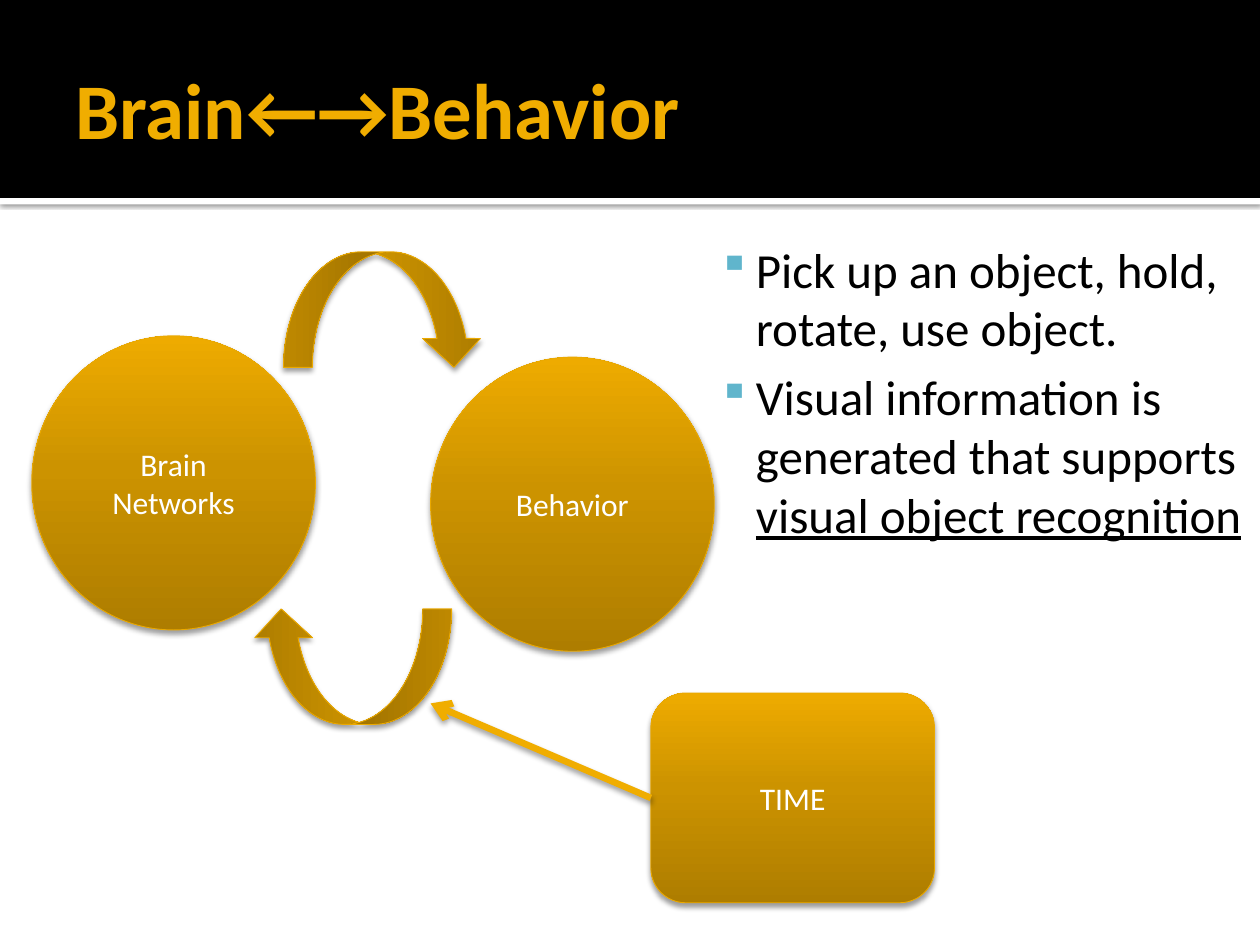
from copy import deepcopy

from lxml.etree import SubElement
from pptx import Presentation
from pptx.dml.color import RGBColor
from pptx.enum.shapes import MSO_CONNECTOR, MSO_SHAPE
from pptx.enum.text import MSO_ANCHOR, PP_ALIGN
from pptx.oxml.ns import qn
from pptx.util import Cm, Pt

BLACK = RGBColor(0x00, 0x00, 0x00)
WHITE = RGBColor(0xFF, 0xFF, 0xFF)
GOLD = RGBColor(0xF0, 0xAD, 0x00)
EDGE = RGBColor(0xEB, 0xA9, 0x00)
BLUE = RGBColor(0x60, 0xB5, 0xCC)
SHADES = [
    (0, RGBColor(0xAE, 0x7D, 0x00)),
    (0.55, RGBColor(0xCC, 0x93, 0x00)),
    (1, RGBColor(0xEE, 0xAB, 0x00)),
]


def add_tag(parent, tag, **attrs):
    node = SubElement(parent, qn(tag))
    for key, value in attrs.items():
        node.set(key, str(value))
    return node


def cast(item, blur, dist, alpha):
    """Give the item a black shadow that falls straight down."""
    props = item.element.spPr
    effects = props.find(qn("a:effectLst"))
    if effects is None:
        effects = add_tag(props, "a:effectLst")
    outer = add_tag(effects, "a:outerShdw", blurRad=Pt(blur), dist=Pt(dist),
                    dir=90 * 60000, algn="ctr", rotWithShape=0)
    color = add_tag(outer, "a:srgbClr", val=BLACK)
    add_tag(color, "a:alpha", val=alpha * 1000)


class Deck:
    font = "Calibri"

    def __init__(self, width, height):
        self.file = Presentation()
        self.file.slide_width = Cm(width)
        self.file.slide_height = Cm(height)
        self.slide = self.file.slides.add_slide(self.file.slide_layouts[5])

    def run(self, para, text, size, color, bold=False, under=False):
        run = para.add_run()
        run.text = text
        font = run.font
        font.name, font.size, font.bold = self.font, Pt(size), bold
        font.color.rgb = color
        if under:
            font.underline = True

    def frame(self, shape, insets, anchor):
        frame = shape.text_frame
        frame.word_wrap = True
        frame.vertical_anchor = anchor
        (frame.margin_left, frame.margin_top,
         frame.margin_right, frame.margin_bottom) = map(Cm, insets)
        return frame

    def shape(self, kind, box):
        shape = self.slide.shapes.add_shape(kind, *map(Cm, box))
        shape.shadow.inherit = False
        return shape

    def band(self, top, height, color):
        band = self.shape(MSO_SHAPE.RECTANGLE,
                          (0, top, self.file.slide_width.cm, height))
        band.fill.solid()
        band.fill.fore_color.rgb = color
        band.line.fill.background()
        return band

    def title(self, text, box):
        title = self.slide.shapes.title
        title.left, title.top, title.width, title.height = map(Cm, box)
        # Bring the title in front of the bands.
        title.element.getparent().append(title.element)
        frame = self.frame(title, (0.25, 0.13, 0.13, 0.13), MSO_ANCHOR.MIDDLE)
        para = frame.paragraphs[0]
        para.alignment = PP_ALIGN.LEFT
        self.run(para, text, 45, GOLD, bold=True)

    def bullets(self, items, box):
        """Each item is a list of (text, underlined) runs."""
        body = self.slide.shapes.add_textbox(*map(Cm, box))
        frame = self.frame(body, (0.15, 0.25, 0.25, 0.13), MSO_ANCHOR.TOP)
        for i, runs in enumerate(items):
            para = frame.add_paragraph() if i else frame.paragraphs[0]
            para.space_before = Pt(5.6)
            props = para._p.get_or_add_pPr()
            props.set("marL", str(Cm(2.03)))
            props.set("indent", str(Cm(-0.76)))
            add_tag(add_tag(props, "a:buClr"), "a:srgbClr", val=BLUE)
            add_tag(props, "a:buSzPct", val=90000)
            add_tag(props, "a:buChar", char="▪")
            for text, under in runs:
                self.run(para, text, 28, BLACK, under=under)

    def node(self, kind, box, text="", turn=0):
        """Add a glossy gold shape, with a label if text is given."""
        node = self.shape(kind, box)
        node.rotation = turn
        node.fill.gradient()
        node.fill.gradient_angle = 90
        stops = node.fill._fill._gradFill.gsLst
        stops.append(deepcopy(stops[0]))
        for stop, (place, color) in zip(node.fill.gradient_stops, SHADES):
            stop.position = place
            stop.color.rgb = color
        node.line.color.rgb = EDGE
        node.line.width = Pt(0.5)
        cast(node, 3.1, 2, 38)
        if text:
            frame = self.frame(node, (0.25, 0.13, 0.25, 0.13),
                               MSO_ANCHOR.MIDDLE)
            para = frame.paragraphs[0]
            para.alignment = PP_ALIGN.CENTER
            self.run(para, text, 18, WHITE)
        return node

    def arrow(self, start, end, source):
        """Draw an arrow from the left side of the source shape."""
        line = self.slide.shapes.add_connector(
            MSO_CONNECTOR.STRAIGHT, *map(Cm, start + end))
        line.begin_connect(source, 1)
        line.line.color.rgb = GOLD
        line.line.width = Pt(3.78)
        add_tag(line.line._get_or_add_ln(), "a:tailEnd", type="arrow")
        cast(line, 3.5, 2, 38)


def main():
    deck = Deck(25.4, 19.05)
    cast(deck.band(3.99, 0.13, WHITE), 2.5, 0.8, 60)
    deck.band(0, 3.99, BLACK)
    deck.title("Brain←→Behavior", (1.27, 0.43, 22.86, 3.48))
    deck.bullets([
        [("Pick up an object, hold, rotate, use object.", False)],
        [("Visual information is generated that supports ", False),
         ("visual object recognition", True)],
    ], (13.06, 4.57, 13.34, 12.85))

    disc = (5.72, 5.93)
    bend = (2.33, 4.02)
    deck.node(MSO_SHAPE.OVAL, (0.64, 6.77, *disc), "Brain Networks")
    deck.node(MSO_SHAPE.CURVED_LEFT_ARROW, (6.56, 4.23, *bend), turn=270)
    deck.node(MSO_SHAPE.OVAL, (8.68, 7.2, *disc), "Behavior")
    deck.node(MSO_SHAPE.CURVED_LEFT_ARROW, (5.93, 11.43, *bend), turn=90)
    time = deck.node(MSO_SHAPE.FLOWCHART_ALTERNATE_PROCESS,
                     (13.12, 13.97, 5.72, 4.23), "TIME")
    deck.arrow((13.12, 16.09), (8.68, 14.18), time)
    deck.file.save("out.pptx")


if __name__ == "__main__":
    main()
